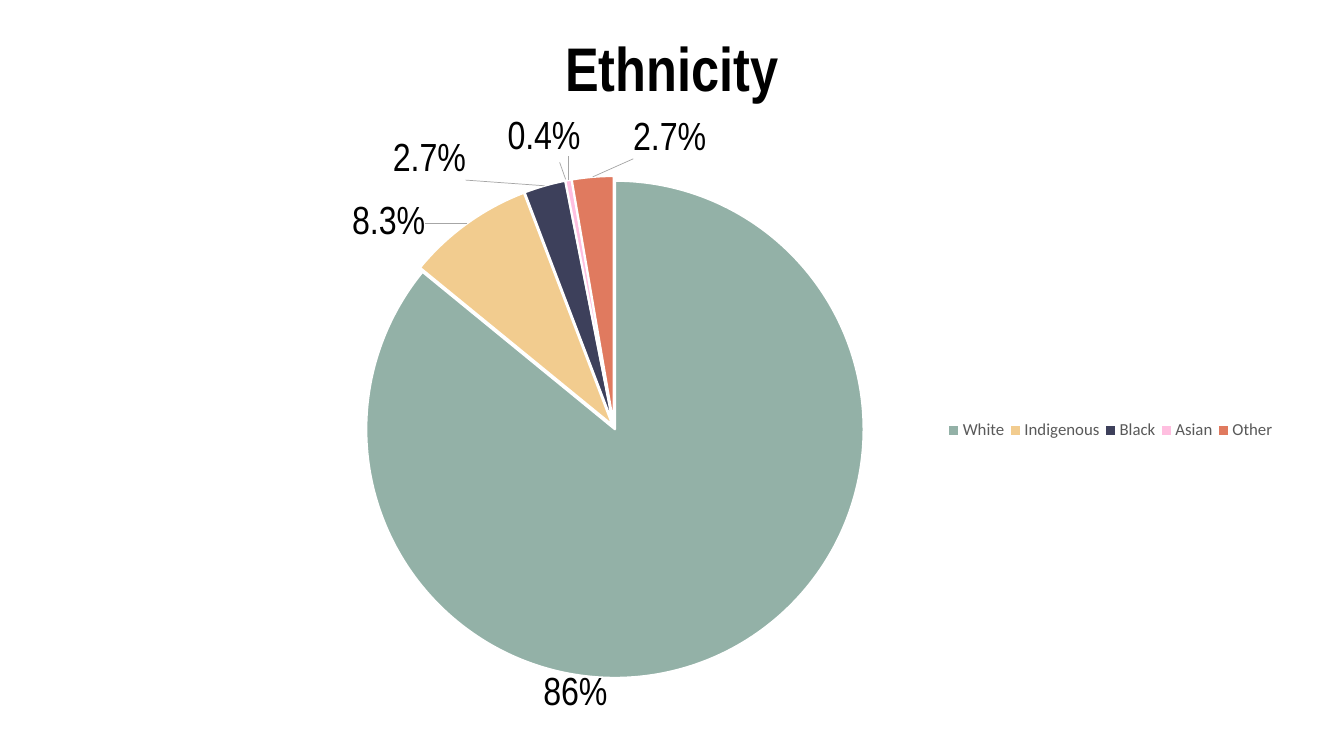
from dataclasses import dataclass

from lxml.etree import SubElement
from pptx import Presentation
from pptx.chart.data import CategoryChartData
from pptx.dml.color import RGBColor
from pptx.enum.chart import XL_CHART_TYPE, XL_LABEL_POSITION, XL_LEGEND_POSITION
from pptx.enum.shapes import MSO_CONNECTOR
from pptx.enum.text import MSO_ANCHOR, PP_ALIGN
from pptx.oxml import parse_xml
from pptx.oxml.ns import nsdecls, qn
from pptx.util import Inches, Pt

SLIDE_WIDTH, SLIDE_HEIGHT = Inches(13.33), Inches(7.5)
NARROW, BODY = "Arial Narrow", "Calibri"
COLOURS = {
    "black": "000000",
    "white": "FFFFFF",
    "legend": "595959",
    "leader": "A6A6A6",
    "sage": "93B1A7",
    "sand": "F2CC8F",
    "navy": "3D405B",
    "pink": "FFBFE0",
    "coral": "E07A5F",
}


@dataclass(frozen=True)
class Box:
    """A rectangle in shares of the slide or of the chart."""
    left: float
    top: float
    width: float
    height: float

    def on_slide(self) -> tuple[int, int, int, int]:
        return (round(self.left * SLIDE_WIDTH), round(self.top * SLIDE_HEIGHT),
                round(self.width * SLIDE_WIDTH), round(self.height * SLIDE_HEIGHT))


@dataclass(frozen=True)
class Slice:
    name: str
    value: float
    colour: str
    shift: tuple[float, float]  # label offset in shares of the chart
    label: str = ""  # empty: the computed percentage


SLICES = [
    Slice("White", 86, "sage", (-0.14, 0.03)),
    Slice("Indigenous", 8.3, "sand", (-0.03, 0.04), "8.3%"),
    Slice("Black", 2.7, "navy", (-0.06, 0), "2.7%"),
    Slice("Asian", 0.4, "pink", (0.01, -0.03), "0.4%"),
    Slice("Other", 2.7, "coral", (0.06, -0.02), "2.7%"),
]
TITLE_BOX = Box(0.07, 0, 0.86, 0.19)
CHART_BOX = Box(0.02, 0.16, 0.96, 0.81)
PLOT_BOX = Box(0.25, 0.09, 0.41, 0.82)
LEGEND_BOX = Box(0.71, 0.48, 0.26, 0.05)


def colour(name: str) -> RGBColor:
    return RGBColor.from_string(COLOURS[name])


def style_font(font, size: float, name: str, colour_name: str = "black", bold: bool = False) -> None:
    font.size, font.name, font.bold = Pt(size), name, bold
    font.color.rgb = colour(colour_name)


def set_layout(parent, index: int, **settings) -> None:
    """Give a chart part a manual layout, as its child at the given index."""
    for previous in parent.findall(qn("c:layout")):
        parent.remove(previous)
    layout = parse_xml(f"<c:layout {nsdecls('c')}><c:manualLayout/></c:layout>")
    for tag, value in settings.items():
        SubElement(layout[0], qn(f"c:{tag}")).set("val", str(value))
    parent.insert(index, layout)


def box_settings(box: Box) -> dict:
    return {"xMode": "edge", "yMode": "edge",
            "x": box.left, "y": box.top, "w": box.width, "h": box.height}


def add_title(slide, text: str) -> None:
    text_frame = slide.shapes.add_textbox(*TITLE_BOX.on_slide()).text_frame
    text_frame.word_wrap = True
    text_frame.vertical_anchor = MSO_ANCHOR.MIDDLE
    text_frame.text = text
    paragraph = text_frame.paragraphs[0]
    paragraph.alignment, paragraph.line_spacing = PP_ALIGN.CENTER, 0.9
    style_font(paragraph.runs[0].font, 44, NARROW, bold=True)


def style_slice(series, index: int, part: Slice) -> None:
    point = series.points[index]
    point.format.fill.solid()
    point.format.fill.fore_color.rgb = colour(part.colour)
    point.format.line.color.rgb = colour("white")
    point.format.line.width = Pt(1.5)
    label = point.data_label
    if part.label:
        label.text_frame.text = part.label
        style_font(label.text_frame.paragraphs[0].runs[0].font, 28, NARROW)
    else:
        style_font(label.font, 28, NARROW)
    label.position = XL_LABEL_POSITION.OUTSIDE_END
    element = series.data_labels._element.findall(qn("c:dLbl"))[index]
    element.find(qn("c:showVal")).set("val", "0")
    element.find(qn("c:showPercent")).set("val", "1")
    set_layout(element, 1, x=part.shift[0], y=part.shift[1])


def add_pie(slide) -> None:
    data = CategoryChartData()
    data.categories = [part.name for part in SLICES]
    data.add_series("Series 1", [part.value for part in SLICES])
    chart = slide.shapes.add_chart(XL_CHART_TYPE.PIE, *CHART_BOX.on_slide(), data).chart
    chart.has_title = False
    style_font(chart.font, 10, BODY)
    set_layout(chart._chartSpace.chart.plotArea, 0, layoutTarget="inner", **box_settings(PLOT_BOX))

    # Slices and their labels
    series = chart.plots[0].series[0]
    labels = series.data_labels
    labels.show_value, labels.show_percentage = False, True
    labels.position = XL_LABEL_POSITION.OUTSIDE_END
    style_font(labels.font, 28, NARROW)
    for index, part in enumerate(SLICES):
        style_slice(series, index, part)
    explosion = parse_xml(f'<c:explosion {nsdecls("c")} val="1"/>')
    series._element.find(qn("c:dPt")).addprevious(explosion)

    # Leader lines
    for switch in labels._element.findall(qn("c:showLeaderLines")):
        labels._element.remove(switch)
    SubElement(labels._element, qn("c:showLeaderLines")).set("val", "1")
    labels._element.append(parse_xml(
        f'<c:leaderLines {nsdecls("c", "a")}><c:spPr><a:ln w="{Pt(0.5)}"><a:solidFill>'
        f'<a:srgbClr val="{COLOURS["leader"]}"/></a:solidFill></a:ln></c:spPr></c:leaderLines>'))

    # Legend in one row
    chart.has_legend = True
    legend = chart.legend
    legend.position = XL_LEGEND_POSITION.RIGHT
    legend.include_in_layout = False
    style_font(legend.font, 12, BODY, "legend")
    set_layout(legend._element, 1, **box_settings(LEGEND_BOX))


def add_asian_leader(slide) -> None:
    connector = slide.shapes.add_connector(
        MSO_CONNECTOR.STRAIGHT,
        round(0.4164 * SLIDE_WIDTH), round(0.2147 * SLIDE_HEIGHT),
        round(0.4209 * SLIDE_WIDTH), round(0.2373 * SLIDE_HEIGHT))
    connector.line.color.rgb = colour("leader")
    connector.line.width = Pt(0.5)
    SubElement(connector._element.spPr, qn("a:effectLst"))


def main() -> None:
    presentation = Presentation()
    presentation.slide_width, presentation.slide_height = SLIDE_WIDTH, SLIDE_HEIGHT
    slide = presentation.slides.add_slide(presentation.slide_layouts[6])
    add_title(slide, "Ethnicity")
    add_pie(slide)
    add_asian_leader(slide)
    presentation.save("out.pptx")


if __name__ == "__main__":
    main()
